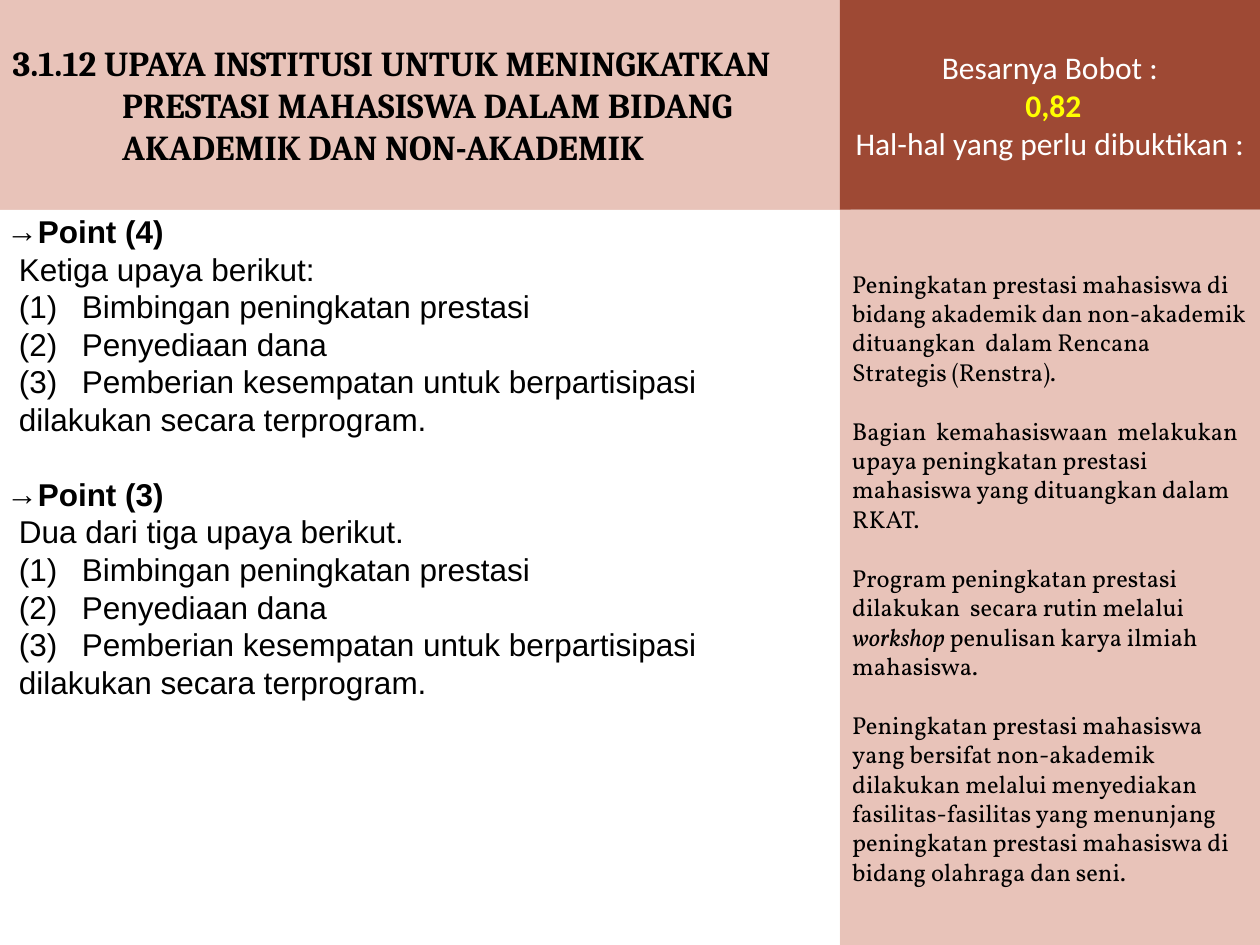
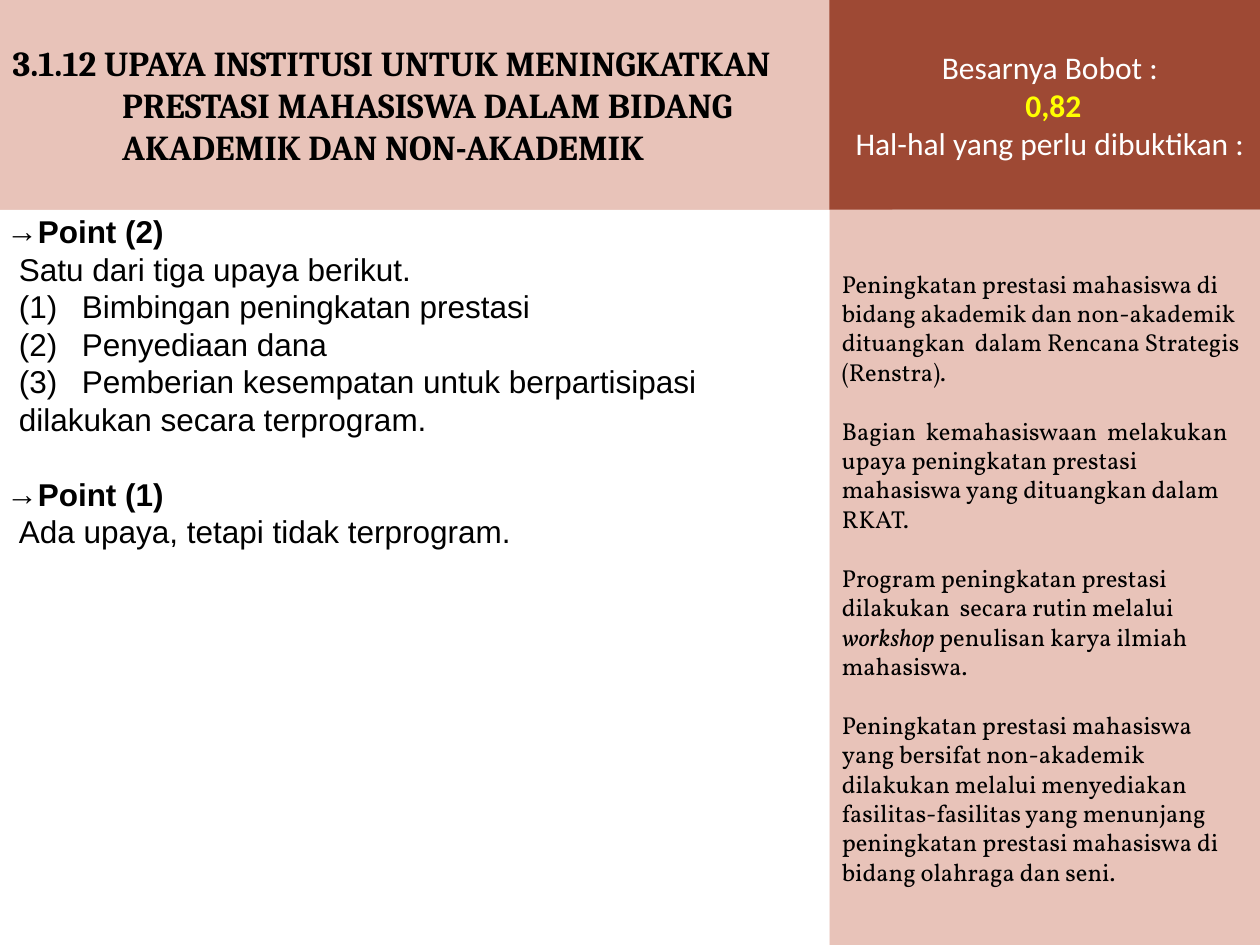
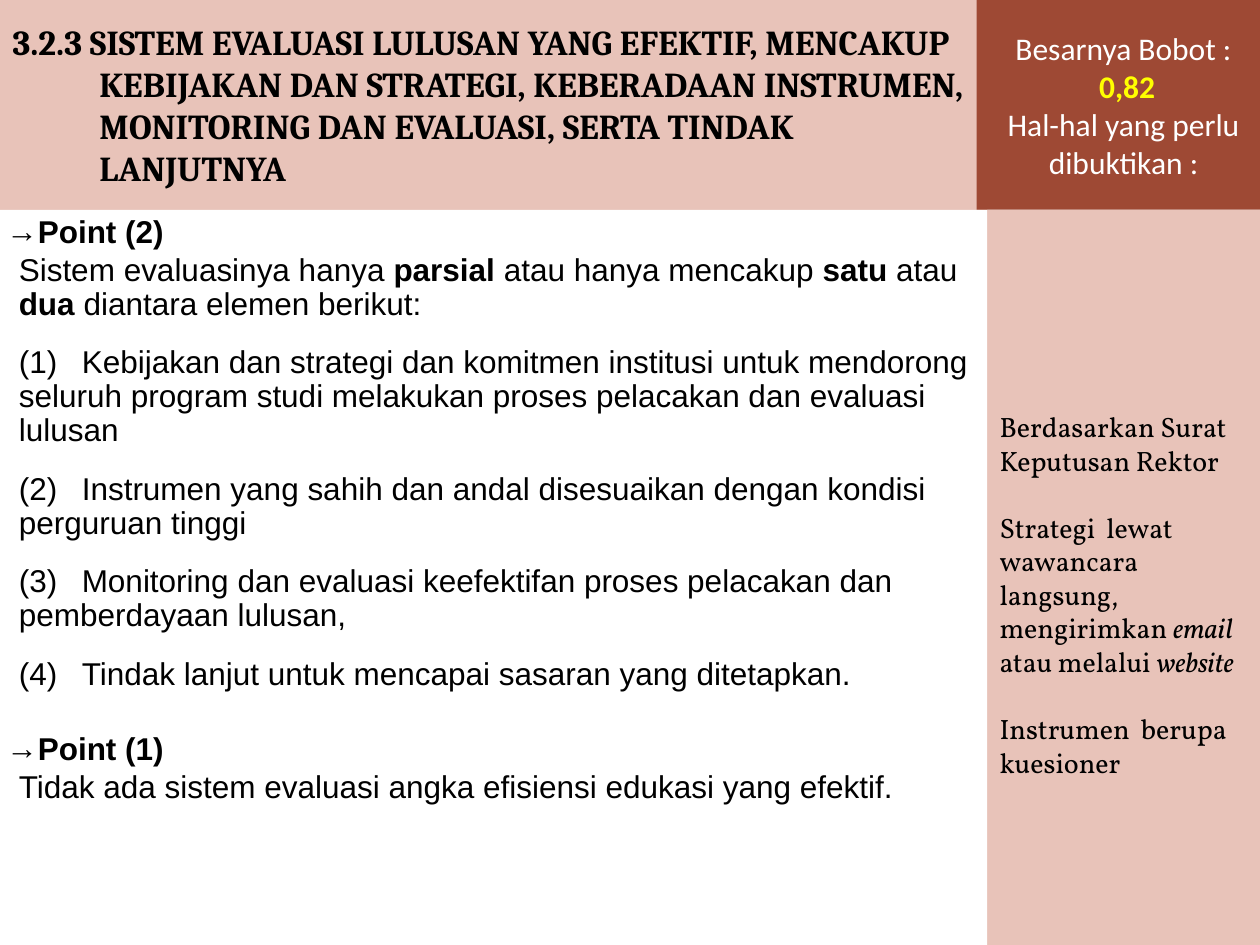
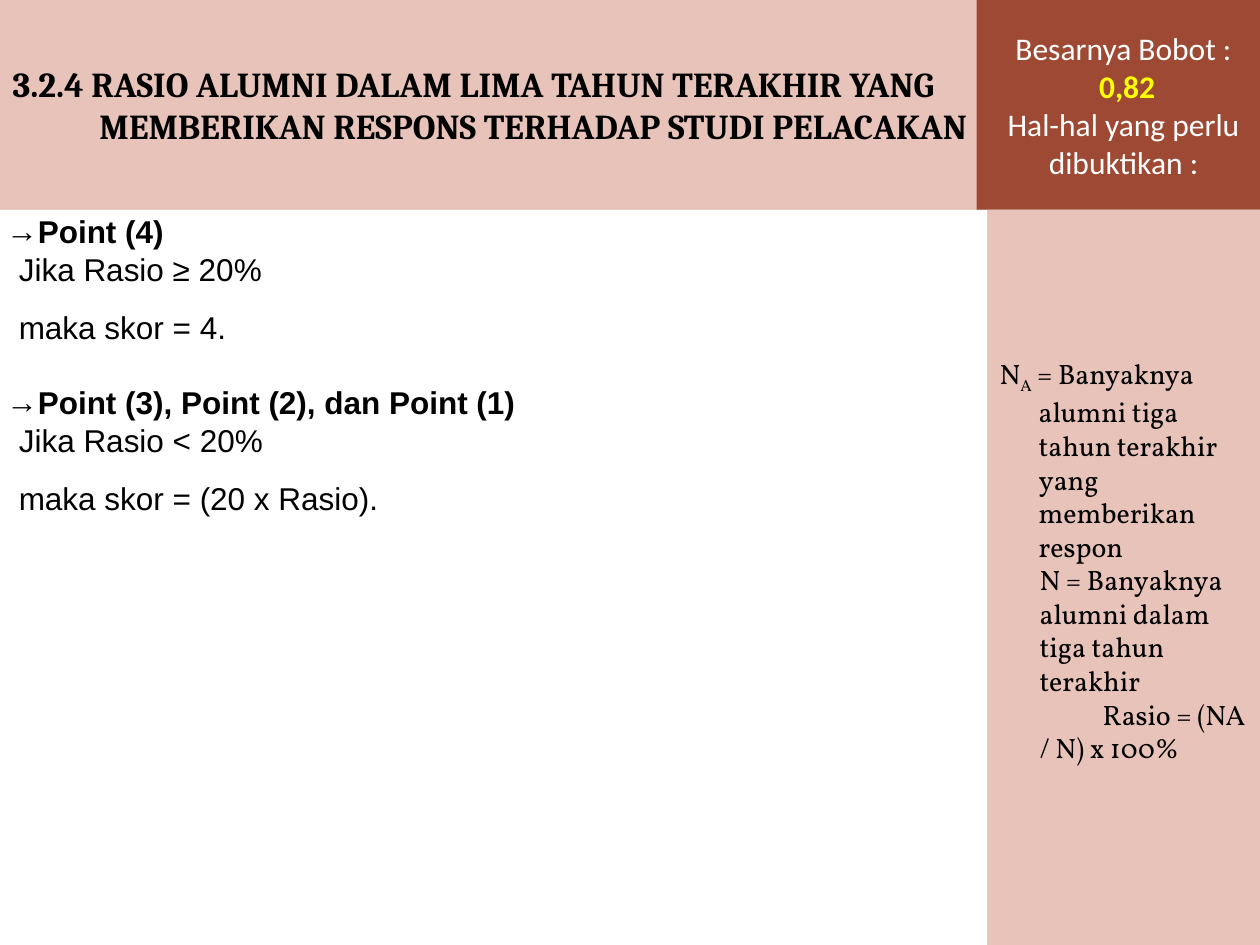
from dataclasses import dataclass

from lxml.etree import SubElement as SubEl
from pptx import Presentation as Deck
from pptx.dml.color import RGBColor as Color
from pptx.enum.shapes import MSO_SHAPE as Form
from pptx.enum.text import MSO_ANCHOR as Anchor, MSO_AUTO_SIZE as Fit, PP_ALIGN as Align
from pptx.oxml.ns import qn
from pptx.shapes.autoshape import Shape
from pptx.slide import Slide
from pptx.text.text import TextFrame as Frame, _Paragraph as Para, _Run as Run
from pptx.util import Cm, Pt

ROSE = Color(0xE8, 0xC3, 0xB9)
RUST = Color(0x9E, 0x49, 0x34)
WHITE = Color(0xFF, 0xFF, 0xFF)
BLACK = Color(0, 0, 0)
YELLOW = Color(0xFF, 0xFF, 0)

WIDE, HIGH, BAND = 25.4, 19.05, 4.23
BODY_GAP = 21.5
MARK = "|"


@dataclass(frozen=True)
class Font:
    name: str
    size: float
    color: Color = BLACK
    bold: bool = False


@dataclass(frozen=True)
class Line:
    text: str
    gap: float = 0
    left: float = 0
    first: float = 0
    arrow: bool = False


@dataclass(frozen=True)
class Page:
    title: str
    hang: float
    head: float
    red: float
    over: float
    split: float
    body: list[Line]
    side: list[Line]
    size: float
    stress: str = "italic"
    above: float = 0
    below: float = 0


TITLE = Font("Cambria", 20, bold=True)
BODY = Font("Arial", 18)
HEAD = Font("Arial", 18, bold=True)
WEIGHT = Font("Calibri", 18, WHITE)


def head(text: str, gap: float = 0) -> Line:
    return Line(text, gap, 0.25, -0.25, True)


def line(text: str, gap: float = 0) -> Line:
    return Line(text, gap, 0.25)


def style(run: Run, font: Font) -> None:
    run.font.name = font.name
    run.font.size = Pt(font.size)
    run.font.bold = font.bold
    run.font.color.rgb = font.color


def stress(run: Run, kind: str) -> None:
    if kind == "italic":
        run.font.italic = True
    elif kind == "sub":
        run.font._element.set("baseline", "-25000")
    else:
        run.font.bold = True
        if kind == "yellow":
            run.font.color.rgb = YELLOW


def write(para: Para, item: Line, font: Font, kind: str = "bold") -> None:
    parts = item.text.split(MARK)
    para.text = parts[0]
    for part in parts[1:]:
        para.add_run().text = part
    runs = [(i, run) for i, run in enumerate(para.runs, len(parts) - len(para.runs))]
    for i, run in runs:
        style(run, font)
        if i % 2:
            stress(run, kind)
    para.space_before = Pt(item.gap)
    props = para._p.get_or_add_pPr()
    props.set("marL", str(Cm(item.left)))
    props.set("indent", str(Cm(item.first)))


def fill(frame: Frame, items: list[Line], font: Font, kind: str, align: Align) -> None:
    for i, item in enumerate(items):
        para = frame.paragraphs[0] if i == 0 else frame.add_paragraph()
        write(para, item, font, kind)
        para.alignment = align


def box(slide: Slide, left: float, top: float, width: float, height: float, color: Color) -> Shape:
    shape = slide.shapes.add_shape(Form.RECTANGLE, Cm(left), Cm(top), Cm(width), Cm(height))
    shape.shadow.inherit = False
    shape.fill.solid()
    shape.fill.fore_color.rgb = color
    shape.line.fill.background()
    shape.text_frame.word_wrap = True
    shape.text_frame.vertical_anchor = Anchor.MIDDLE
    return shape


def draw_title(slide: Slide, page: Page) -> None:
    title = slide.shapes.title
    title.left, title.top, title.width, title.height = Cm(0), Cm(0), Cm(page.head), Cm(BAND)
    title.fill.solid()
    title.fill.fore_color.rgb = ROSE
    frame = title.text_frame
    frame.auto_size = Fit.NONE
    frame.word_wrap = True
    frame.vertical_anchor = Anchor.MIDDLE
    fill(frame, [Line(page.title, 0, page.hang, -page.hang)], TITLE, "bold", Align.LEFT)


def draw_side(slide: Slide, page: Page) -> None:
    frame = box(slide, page.split, BAND, WIDE - page.split, HIGH - BAND, ROSE).text_frame
    frame.margin_top += Pt(page.above)
    frame.margin_bottom += Pt(page.below)
    fill(frame, page.side, Font("Vollkorn", page.size), page.stress, Align.LEFT)


def draw_body(slide: Slide, page: Page) -> None:
    frame = box(slide, 0, BAND, page.split, HIGH - BAND, WHITE).text_frame
    frame.vertical_anchor = Anchor.TOP
    frame.margin_left = frame.margin_right = Cm(0.13)
    frame.margin_top = frame.margin_bottom = Cm(0.13)
    fill(frame, page.body, BODY, "bold", Align.LEFT)
    for para, item in zip(frame.paragraphs, page.body):
        para.line_spacing = 0.9
        para.space_after = Pt(2)
        props = para._p.get_or_add_pPr()
        if item.arrow:
            style(para.runs[0], HEAD)
            SubEl(props, qn("a:buFont")).set("typeface", BODY.name)
            SubEl(props, qn("a:buChar")).set("char", "→")
        if "\t" in item.text:
            tab = SubEl(SubEl(props, qn("a:tabLst")), qn("a:tab"))
            tab.set("pos", str(Cm(1.57)))
            tab.set("algn", "l")


def draw_weight(slide: Slide, page: Page) -> None:
    frame = box(slide, page.red, 0, WIDE + page.over - page.red, BAND, RUST).text_frame
    texts = ["Besarnya Bobot :", " |0,82", "Hal-hal yang perlu dibuktikan :"]
    fill(frame, [Line(text) for text in texts], WEIGHT, "yellow", Align.CENTER)


EFFORT = "3.1.12 UPAYA INSTITUSI UNTUK MENINGKATKAN PRESTASI MAHASISWA DALAM BIDANG AKADEMIK DAN NON-AKADEMIK"
STEPS = [
    line("(1)\tBimbingan peningkatan prestasi"),
    line("(2)\tPenyediaan dana"),
    line("(3)\tPemberian kesempatan untuk berpartisipasi"),
    line("dilakukan secara terprogram."),
]
PROOF = [
    Line("Peningkatan prestasi mahasiswa di bidang akademik dan non-akademik dituangkan  dalam Rencana Strategis (Renstra)."),
    Line("Bagian  kemahasiswaan  melakukan upaya peningkatan prestasi mahasiswa yang dituangkan dalam RKAT.", 16.8),
    Line("Program peningkatan prestasi dilakukan  secara rutin melalui |workshop| penulisan karya ilmiah mahasiswa.", 16.8),
    Line("Peningkatan prestasi mahasiswa yang bersifat non-akademik dilakukan melalui menyediakan fasilitas-fasilitas "
         "yang menunjang peningkatan prestasi mahasiswa di bidang olahraga dan seni.", 16.8),
]

PAGES = [
    Page(
        EFFORT, 2.21, 17.15, 16.93, 0, 16.93,
        [head("Point (4)"), line("Ketiga upaya berikut:"), *STEPS,
         head("Point (3)", BODY_GAP), line("Dua dari tiga upaya berikut."), *STEPS],
        PROOF, 14,
    ),
    Page(
        EFFORT, 2.21, 17.99, 16.72, 0.21, 16.72,
        [head("Point (2)"), line("Satu dari tiga upaya berikut."), *STEPS,
         head("Point (1)", BODY_GAP), line("Ada upaya, tetapi tidak terprogram.")],
        PROOF, 14,
    ),
    Page(
        "3.2.3 SISTEM EVALUASI LULUSAN YANG EFEKTIF, MENCAKUP KEBIJAKAN DAN STRATEGI, KEBERADAAN INSTRUMEN, "
        "MONITORING DAN EVALUASI, SERTA TINDAK LANJUTNYA",
        1.75, 19.9, 19.69, 0.21, 19.9,
        [
            head("Point (2)"),
            line("Sistem evaluasinya hanya |parsial| atau hanya mencakup |satu| atau |dua |diantara elemen berikut:"),
            line("(1)\tKebijakan dan strategi dan komitmen institusi untuk mendorong seluruh program studi "
                 "melakukan proses pelacakan dan evaluasi lulusan", 12),
            line("(2)\tInstrumen yang sahih dan andal disesuaikan dengan kondisi perguruan tinggi", 12),
            line("(3)\tMonitoring dan evaluasi keefektifan proses pelacakan dan pemberdayaan lulusan,", 12),
            line("(4)\tTindak lanjut untuk mencapai sasaran yang ditetapkan.", 12),
            head("Point (1)", BODY_GAP),
            line("Tidak ada sistem evaluasi angka efisiensi edukasi yang efektif."),
        ],
        [
            Line("Berdasarkan Surat Keputusan Rektor"),
            Line("Strategi  lewat  wawancara langsung,  mengirimkan |email| atau melalui |website", 19.2),
            Line("Instrumen  berupa kuesioner", 19.2),
        ],
        16, above=19.2,
    ),
    Page(
        "3.2.4 RASIO ALUMNI DALAM LIMA TAHUN TERAKHIR YANG MEMBERIKAN RESPONS TERHADAP STUDI PELACAKAN",
        1.75, 19.9, 19.69, 0.21, 19.9,
        [
            head("Point (4)"),
            line("Jika Rasio ≥ 20%"),
            line("maka skor = 4.", 12),
            head("Point (3), Point (2), dan Point (1)", BODY_GAP),
            line("Jika Rasio < 20%"),
            line("maka skor = (20 x Rasio).", 12),
        ],
        [
            Line("N|A| = Banyaknya alumni tiga tahun terakhir yang memberikan respon", 0, 0.79, -0.79),
            Line("N = Banyaknya alumni dalam tiga tahun terakhir", 0, 0.81),
            Line("Rasio = (NA / N) x 100%", 0, 0.81, 1.27),
        ],
        16, "sub", below=19.2,
    ),
]


def main() -> None:
    deck = Deck()
    deck.slide_width, deck.slide_height = Cm(WIDE), Cm(HIGH)
    for page in PAGES:
        slide = deck.slides.add_slide(deck.slide_layouts[5])
        for draw in (draw_title, draw_side, draw_body, draw_weight):
            draw(slide, page)
    deck.save("out.pptx")


if __name__ == "__main__":
    main()
